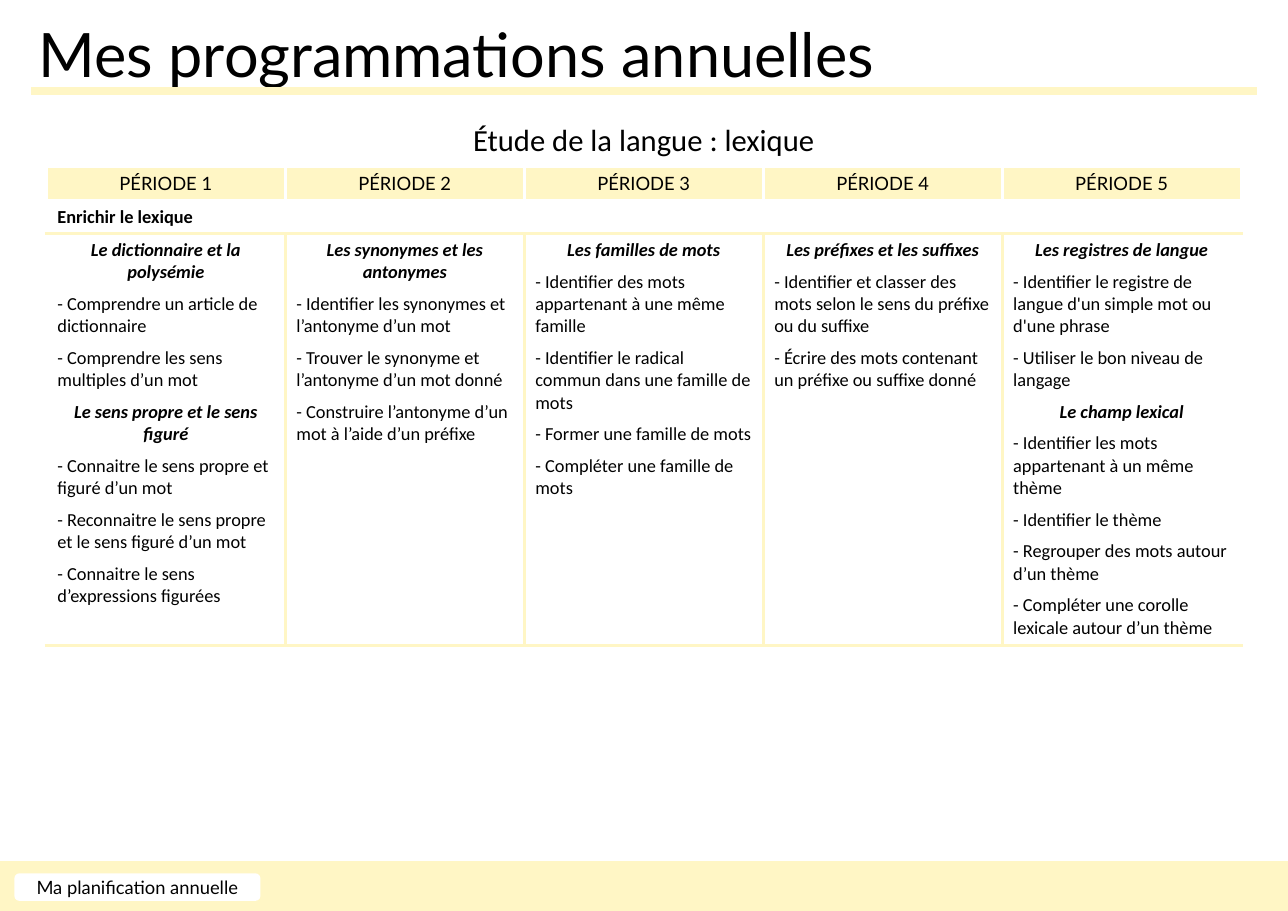
from lxml.etree import SubElement
from pptx import Presentation
from pptx.dml.color import RGBColor
from pptx.enum.shapes import MSO_CONNECTOR, MSO_SHAPE
from pptx.enum.text import MSO_ANCHOR, PP_ALIGN
from pptx.oxml.ns import qn
from pptx.util import Cm, Pt

CREAM = RGBColor(0xFF, 0xF6, 0xC5)
WHITE = RGBColor(0xFF, 0xFF, 0xFF)
BLACK = RGBColor(0x00, 0x00, 0x00)

PAGE_WIDTH, PAGE_HEIGHT = 29.7, 21
COLUMN_WIDTH = 5.51
ROW_HEIGHTS = [1.15, 0.72, 0.77, 9.5]

# Lines that start with a dash are skills; the others are headings.
PERIODS = [
    ["Le dictionnaire et la polysémie",
     "- Comprendre un article de dictionnaire",
     "- Comprendre les sens multiples d’un mot",
     "Le sens propre et le sens figuré",
     "- Connaitre le sens propre et figuré d’un mot",
     "- Reconnaitre le sens propre et le sens figuré d’un mot",
     "- Connaitre le sens d’expressions figurées"],
    ["Les synonymes et les antonymes",
     "- Identifier les synonymes et l’antonyme d’un mot",
     "- Trouver le synonyme et l’antonyme d’un mot donné",
     "- Construire l’antonyme d’un mot à l’aide d’un préfixe"],
    ["Les familles de mots",
     "- Identifier des mots appartenant à une même famille",
     "- Identifier le radical commun dans une famille de mots",
     "- Former une famille de mots",
     "- Compléter une famille de mots"],
    ["Les préfixes et les suffixes",
     "- Identifier et classer des mots selon le sens du préfixe ou du suffixe",
     "- Écrire des mots contenant un préfixe ou suffixe donné"],
    ["Les registres de langue",
     "- Identifier le registre de langue d'un simple mot ou d'une phrase",
     "- Utiliser le bon niveau de langage",
     "Le champ lexical",
     "- Identifier les mots appartenant à un même thème",
     "- Identifier le thème",
     "- Regrouper des mots autour d’un thème",
     "- Compléter une corolle lexicale autour d’un thème"],
]


def write(para, text, font="Calibri", size=12, bold=False, italic=False,
          align=PP_ALIGN.LEFT, after=0):
    para.alignment = align
    para.space_after = Pt(after)
    span = para.add_run()
    span.text = text
    span.font.name = font
    span.font.size = Pt(size)
    span.font.bold = bold
    span.font.italic = italic
    span.font.color.rgb = BLACK


class Planner:
    """Slide style and the page being drawn."""

    def __init__(self, deck):
        self.page = deck.slides.add_slide(deck.slide_layouts[6])

    def title(self, text, left, top, width, height):
        box = self.page.shapes.add_textbox(Cm(left), Cm(top), Cm(width), Cm(height))
        box.text_frame.word_wrap = True
        write(box.text_frame.paragraphs[0], text, font="Lato", size=40)

    def rule(self, left, right, y):
        line = self.page.shapes.add_connector(
            MSO_CONNECTOR.STRAIGHT, Cm(left), Cm(y), Cm(right), Cm(y))
        line.line.color.rgb = CREAM
        line.line.width = Pt(4.75)
        SubElement(line._element.spPr, qn("a:effectLst"))

    def panel(self, kind, color, left, top, width, height, text=None):
        shape = self.page.shapes.add_shape(kind, Cm(left), Cm(top), Cm(width), Cm(height))
        shape.shadow.inherit = False
        shape.fill.solid()
        shape.fill.fore_color.rgb = color
        shape.line.color.rgb = color
        shape.line.width = Pt(1)
        if text:
            frame = shape.text_frame
            frame.margin_top = frame.margin_bottom = 0
            frame.vertical_anchor = MSO_ANCHOR.MIDDLE
            write(frame.paragraphs[0], text, font="Lato", align=PP_ALIGN.CENTER)

    def grid(self, left, top, widths, heights):
        frame = self.page.shapes.add_table(
            len(heights), len(widths), Cm(left), Cm(top), Cm(sum(widths)), Cm(sum(heights)))
        table = frame.table
        table.first_row = table.horz_banding = False
        for column, width in zip(table.columns, widths):
            column.width = Cm(width)
        for row, height in zip(table.rows, heights):
            row.height = Cm(height)
        return table

    def cell(self, cell, fill=WHITE, left=WHITE, right=WHITE, top=WHITE, bottom=WHITE):
        properties = cell._tc.get_or_add_tcPr()
        for tag, color in (("lnL", left), ("lnR", right), ("lnT", top), ("lnB", bottom)):
            border = SubElement(properties, qn(f"a:{tag}"), w=str(Pt(2.25)))
            solid = SubElement(border, qn("a:solidFill"))
            SubElement(solid, qn("a:srgbClr"), val=str(color))
        cell.fill.solid()
        cell.fill.fore_color.rgb = fill


def main():
    deck = Presentation()
    deck.slide_width, deck.slide_height = Cm(PAGE_WIDTH), Cm(PAGE_HEIGHT)
    planner = Planner(deck)

    # Programme table
    last = len(PERIODS) - 1
    table = planner.grid(1.07, 2.7, [COLUMN_WIDTH] * len(PERIODS), ROW_HEIGHTS)
    for index, lines in enumerate(PERIODS):
        subject, header, theme, skills = (table.cell(row, index) for row in range(4))
        planner.cell(subject)
        planner.cell(header, fill=CREAM)
        planner.cell(theme, bottom=CREAM)
        planner.cell(skills, top=CREAM, bottom=CREAM,
                     left=CREAM if index else WHITE,
                     right=CREAM if index < last else WHITE)

        header.vertical_anchor = MSO_ANCHOR.MIDDLE
        write(header.text_frame.paragraphs[0], f"PÉRIODE {index + 1}",
              font="Lato", align=PP_ALIGN.CENTER)

        frame = skills.text_frame
        for number, line in enumerate(lines):
            para = frame.add_paragraph() if number else frame.paragraphs[0]
            heading = not line.startswith("-")
            write(para, line, bold=heading, italic=heading, after=6,
                  align=PP_ALIGN.CENTER if heading else PP_ALIGN.LEFT)

    # Rows that span all periods
    for row in (0, 2):
        table.cell(row, 0).merge(table.cell(row, last))
    write(table.cell(0, 0).text_frame.paragraphs[0], "Étude de la langue : lexique",
          size=20, align=PP_ALIGN.CENTER)
    write(table.cell(2, 0).text_frame.paragraphs[0], "Enrichir le lexique", bold=True)

    # Page title and its rule
    planner.title("Mes programmations annuelles", 0.64, 0.25, 21.74, 1.96)
    planner.rule(0.72, 28.98, 2.1)

    # Footer band and label
    planner.panel(MSO_SHAPE.RECTANGLE, CREAM, 0, 19.87, PAGE_WIDTH, 1.13)
    planner.panel(MSO_SHAPE.ROUNDED_RECTANGLE, WHITE, 0.35, 20.15, 5.64, 0.6,
                  text="Ma planification annuelle")

    deck.save("out.pptx")


if __name__ == "__main__":
    main()
